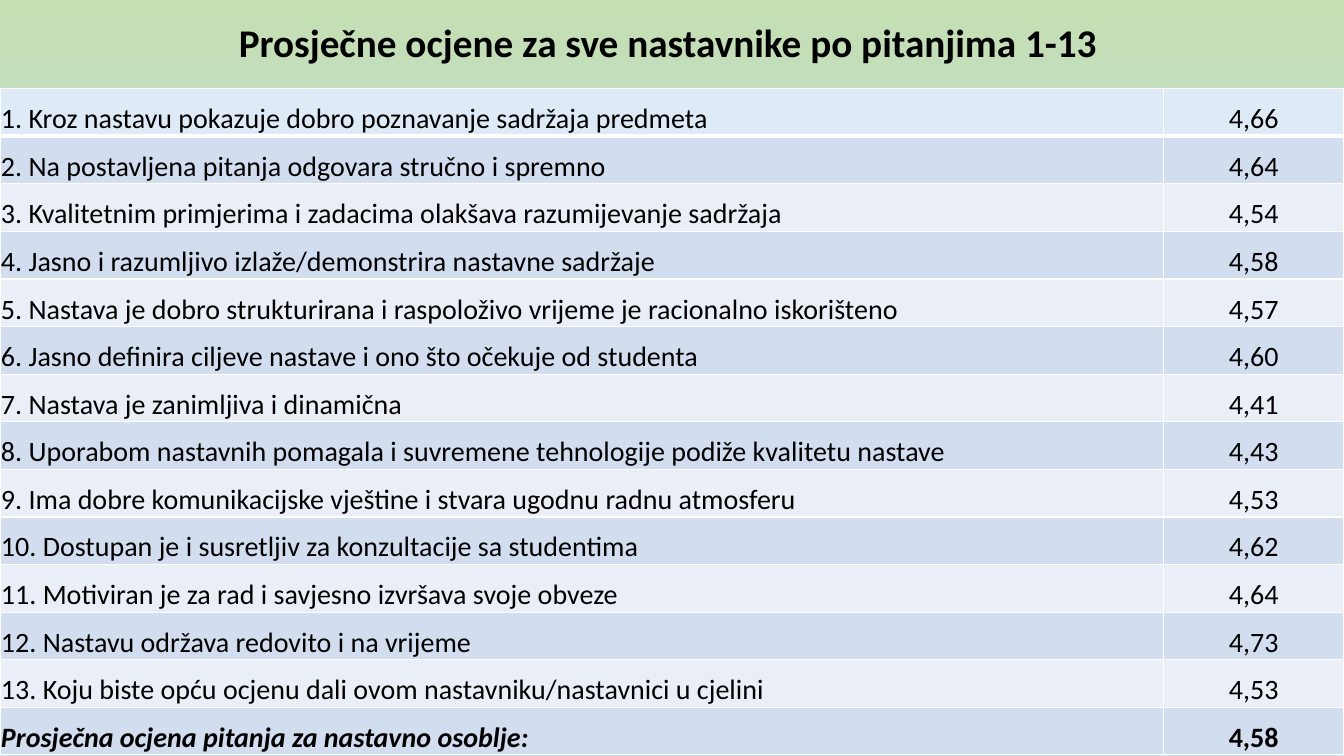
import copy
import pptx
import pptx.util
import pptx.dml.color
import pptx.enum.text
import pptx.oxml
import pptx.oxml.ns

Inches, Pt = pptx.util.Inches, pptx.util.Pt
RGBColor = pptx.dml.color.RGBColor
PP_ALIGN = pptx.enum.text.PP_ALIGN
MSO_ANCHOR = pptx.enum.text.MSO_ANCHOR
qn = pptx.oxml.ns.qn

SLIDE_W, SLIDE_H = 13.33, 7.5
FONT = "Calibri"
BLACK = RGBColor(0x00, 0x00, 0x00)
WHITE = RGBColor(0xFF, 0xFF, 0xFF)
FIRST_ROW = RGBColor(0xDE, 0xEB, 0xF7)
BANDS = [RGBColor(0xEA, 0xEF, 0xF7), RGBColor(0xD2, 0xDE, 0xEF)]
GREEN = RGBColor(0xC5, 0xE0, 0xB4)
BLUE = RGBColor(0xB5, 0xD2, 0xEC)
PALE_BLUE = RGBColor(0xCE, 0xE1, 0xF2)
BACKGROUND = [(0, GREEN), (0.74, BLUE), (0.83, BLUE), (1, PALE_BLUE)]

TITLE = "Prosječne ocjene za sve nastavnike po pitanjima 1-13 "
QUESTIONS = [
    ("Kroz nastavu pokazuje dobro poznavanje sadržaja predmeta", "4,66"),
    ("Na postavljena pitanja odgovara stručno i spremno", "4,64"),
    ("Kvalitetnim primjerima i zadacima olakšava razumijevanje sadržaja", "4,54"),
    ("Jasno i razumljivo izlaže/demonstrira nastavne sadržaje", "4,58"),
    ("Nastava je dobro strukturirana i raspoloživo vrijeme je racionalno iskorišteno", "4,57"),
    ("Jasno definira ciljeve nastave i ono što očekuje od studenta", "4,60"),
    ("Nastava je zanimljiva i dinamična", "4,41"),
    ("Uporabom nastavnih pomagala i suvremene tehnologije podiže kvalitetu nastave", "4,43"),
    ("Ima dobre komunikacijske vještine i stvara ugodnu radnu atmosferu", "4,53"),
    ("Dostupan je i susretljiv za konzultacije sa studentima", "4,62"),
    ("Motiviran je za rad i savjesno izvršava svoje obveze", "4,64"),
    ("Nastavu održava redovito i na vrijeme", "4,73"),
    ("Koju biste opću ocjenu dali ovom nastavniku/nastavnici u cjelini", "4,53"),
]
AVERAGE = ("Prosječna ocjena pitanja za nastavno osoblje:", "4,58")


def set_background(s):
    fill = s.background.fill
    fill.gradient()
    fill.gradient_angle = 270
    stops = fill.gradient_stops
    # The default gradient has two stops: extend it to the full list
    last = s.background._cSld.findall(".//" + qn("a:gs"))[-1]
    for _ in range(len(BACKGROUND) - len(stops)):
        last.addnext(copy.deepcopy(last))
    for stop, (position, color) in zip(fill.gradient_stops, BACKGROUND):
        stop.position = position
        stop.color.rgb = color


def format_text(p, size, align, bold=False, italic=False):
    p.alignment = align
    for r in p.runs:
        r.font.name = FONT
        r.font.size = Pt(size)
        r.font.bold = bold
        r.font.italic = italic
        r.font.color.rgb = BLACK


def add_title(s, x, y, w, h):
    tf = s.shapes.add_textbox(Inches(x), Inches(y), Inches(w), Inches(h)).text_frame
    tf.word_wrap = True
    tf.text = TITLE
    format_text(tf.paragraphs[0], 28, PP_ALIGN.CENTER, bold=True)


def set_borders(cell, bottom):
    tcPr = cell._tc.get_or_add_tcPr()
    widths = {"lnL": 1, "lnR": 1, "lnT": 1, "lnB": bottom}
    for i, (side, width) in enumerate(widths.items()):
        ln = pptx.oxml.parse_xml(
            f'<a:{side} {pptx.oxml.ns.nsdecls("a")} w="{Pt(width)}">'
            f'<a:solidFill><a:srgbClr val="{WHITE}"/></a:solidFill></a:{side}>')
        tcPr.insert(i, ln)


def add_ratings(s, x, y, w, h):
    rows = [(f"{n}. {question}", rating)
            for n, (question, rating) in enumerate(QUESTIONS, 1)] + [AVERAGE]
    table = s.shapes.add_table(len(rows), 2, Inches(x), Inches(y),
                               Inches(w), Inches(h)).table
    rating_w = 1.79
    table.columns[0].width = Inches(w - rating_w)
    table.columns[1].width = Inches(rating_w)
    for i, row in enumerate(rows):
        table.rows[i].height = Inches(h / len(rows))
        is_average = row == AVERAGE
        for j, text in enumerate(row):
            cell = table.cell(i, j)
            cell.text = text
            cell.vertical_anchor = MSO_ANCHOR.BOTTOM
            cell.margin_left = cell.margin_right = cell.margin_top = Inches(0.01)
            cell.margin_bottom = 0
            cell.fill.solid()
            cell.fill.fore_color.rgb = FIRST_ROW if i == 0 else BANDS[i % 2]
            set_borders(cell, bottom=3 if i == 0 else 1)
            format_text(cell.text_frame.paragraphs[0], 20,
                        PP_ALIGN.CENTER if j else PP_ALIGN.LEFT,
                        bold=is_average, italic=is_average and j == 0)


def main():
    prs = pptx.Presentation()
    prs.slide_width, prs.slide_height = Inches(SLIDE_W), Inches(SLIDE_H)
    s = prs.slides.add_slide(prs.slide_layouts[6])
    set_background(s)
    # Ratings table fills the slide below the title band
    band_h = 0.88
    add_ratings(s, 0, band_h, SLIDE_W, SLIDE_H - band_h - 0.01)
    # Title, centred in the band
    title_w, title_h = 9.52, 0.57
    add_title(s, (SLIDE_W - title_w) / 2, 0.13, title_w, title_h)
    prs.save("out.pptx")


if __name__ == "__main__":
    main()
